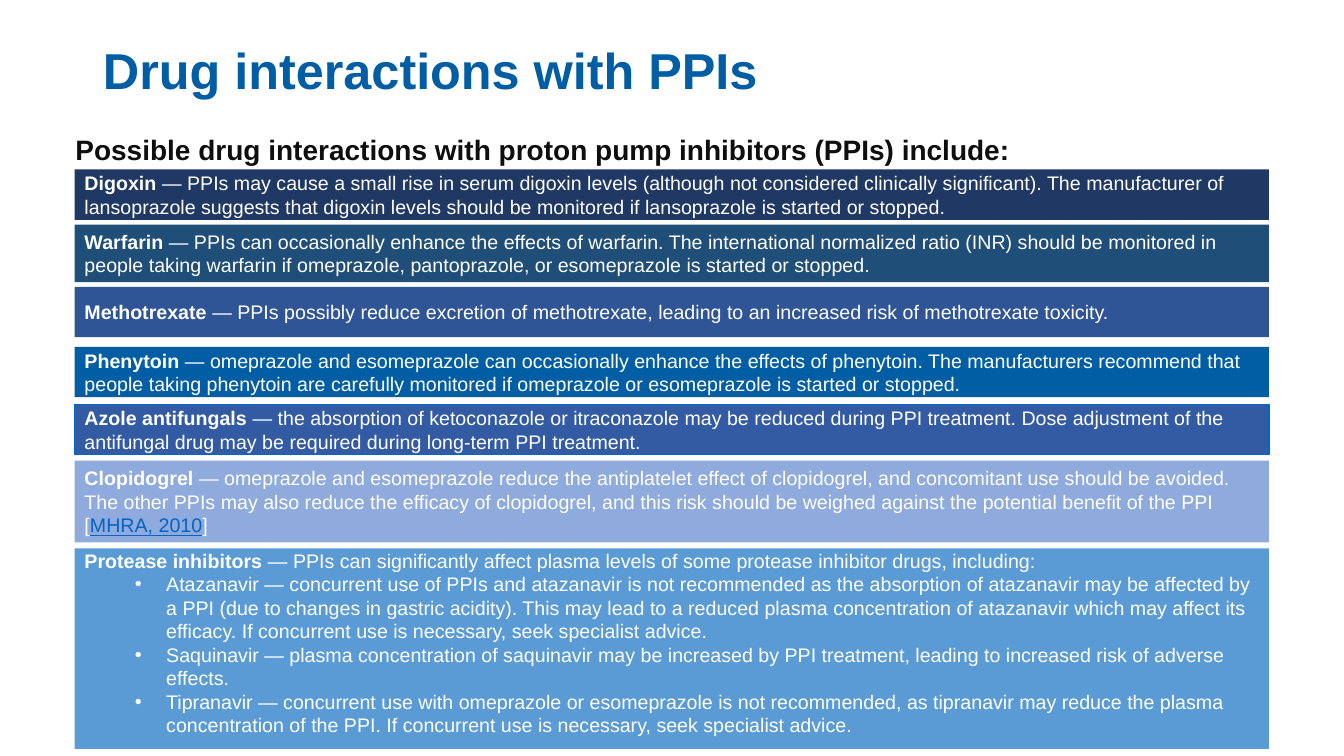
from lxml import etree
from pptx import Presentation
from pptx.dml.color import RGBColor
from pptx.enum.shapes import MSO_SHAPE
from pptx.enum.text import MSO_ANCHOR, MSO_AUTO_SIZE, PP_ALIGN
from pptx.oxml.ns import qn
from pptx.util import Cm, Pt

RECTANGLE = MSO_SHAPE.RECTANGLE
TOP, MIDDLE = MSO_ANCHOR.TOP, MSO_ANCHOR.MIDDLE
LEFT = PP_ALIGN.LEFT
NO_AUTOFIT = MSO_AUTO_SIZE.NONE

COLORS = {
    "title": "015EA4",
    "intro": "0E0E0E",
    "text": "FFFFFF",
    "citation": "0563C1",
    "digoxin": "203864",
    "warfarin": "1F4E79",
    "methotrexate": "2F5597",
    "phenytoin": "015EA4",
    "azole": "325BA4",
    "azole_edge": "0066CC",
    "clopidogrel": "8FAADC",
    "protease": "5B9BD5",
}

BAND_LEFT, BAND_WIDTH = Cm(1.88), Cm(30.1)

INTERACTIONS = [
    ("digoxin", 4.27, 1.27, "Digoxin ",
     "— PPIs may cause a small rise in serum digoxin levels (although not considered clinically "
     "significant). The manufacturer of lansoprazole suggests that digoxin levels should be "
     "monitored if lansoprazole is started or stopped."),
    ("warfarin", 5.66, 1.45, "Warfarin ",
     "— PPIs can occasionally enhance the effects of warfarin. The international normalized ratio "
     "(INR) should be monitored in people taking warfarin if omeprazole, pantoprazole, or "
     "esomeprazole is started or stopped."),
    ("methotrexate", 7.23, 1.27, "Methotrexate ",
     "— PPIs possibly reduce excretion of methotrexate, leading to an increased risk of "
     "methotrexate toxicity."),
    ("phenytoin", 8.74, 1.27, "Phenytoin ",
     "— omeprazole and esomeprazole can occasionally enhance the effects of phenytoin. The "
     "manufacturers recommend that people taking phenytoin are carefully monitored if omeprazole "
     "or esomeprazole is started or stopped."),
    ("azole", 10.19, 1.27, "Azole antifungals ",
     "— the absorption of ketoconazole or itraconazole may be reduced during PPI treatment. Dose "
     "adjustment of the antifungal drug may be required during long-term PPI treatment."),
    ("clopidogrel", 11.61, 2.06, "Clopidogrel ",
     "— omeprazole and esomeprazole reduce the antiplatelet effect of clopidogrel, and concomitant "
     "use should be avoided. The other PPIs may also reduce the efficacy of clopidogrel, and this "
     "risk should be weighed against the potential benefit of the PPI ["),
    ("protease", 13.82, 5.05, "Protease inhibitors ",
     "— PPIs can significantly affect plasma levels of some protease inhibitor drugs, including:"),
]

PROTEASE_INHIBITORS = [
    "Atazanavir — concurrent use of PPIs and atazanavir is not recommended as the absorption of "
    "atazanavir may be affected by a PPI (due to changes in gastric acidity). This may lead to a "
    "reduced plasma concentration of atazanavir which may affect its efficacy. If concurrent use "
    "is necessary, seek specialist advice.",
    "Saquinavir — plasma concentration of saquinavir may be increased by PPI treatment, leading to "
    "increased risk of adverse effects.",
    "Tipranavir — concurrent use with omeprazole or esomeprazole is not recommended, as tipranavir "
    "may reduce the plasma concentration of the PPI. If concurrent use is necessary, seek "
    "specialist advice.",
]


def apply_format(target, values):
    for attribute, value in values.items():
        setattr(target, attribute, value)


def add_run(paragraph, text, size=14, color="text", bold=False, underline=False):
    run = paragraph.add_run()
    run.text = text
    apply_format(run.font, {"name": "Arial", "size": Pt(size), "bold": bold, "underline": underline})
    run.font.color.rgb = RGBColor.from_string(COLORS[color])


def write_heading(shape, text, size, color, left, top, width, height):
    apply_format(shape, {"left": Cm(left), "top": Cm(top), "width": Cm(width), "height": Cm(height)})
    frame = shape.text_frame
    apply_format(frame, {"word_wrap": True, "auto_size": NO_AUTOFIT, "vertical_anchor": TOP})
    paragraph = frame.paragraphs[0]
    apply_format(paragraph, {"alignment": LEFT, "line_spacing": 0.9})
    add_run(paragraph, text, size, color, bold=True)


def add_band(slide, drug, top, height, name, effect):
    band = slide.shapes.add_shape(RECTANGLE, BAND_LEFT, Cm(top), BAND_WIDTH, Cm(height))
    band.shadow.inherit = False
    band.fill.solid()
    band.fill.fore_color.rgb = RGBColor.from_string(COLORS[drug])
    band.line.fill.background()
    apply_format(band.text_frame, {
        "word_wrap": True, "vertical_anchor": MIDDLE, "margin_top": 0, "margin_bottom": 0,
    })
    paragraph = band.text_frame.paragraphs[0]
    paragraph.alignment = LEFT
    add_run(paragraph, name, bold=True)
    add_run(paragraph, effect)
    return band


def add_bullet(frame, text):
    paragraph = frame.add_paragraph()
    apply_format(paragraph, {"level": 1, "alignment": LEFT})
    properties = paragraph._p.get_or_add_pPr()
    properties.set("marL", str(Cm(2.06)))
    properties.set("indent", str(Cm(-0.79)))
    etree.SubElement(properties, qn("a:buFont")).set("typeface", "Arial")
    etree.SubElement(properties, qn("a:buChar")).set("char", "•")
    add_run(paragraph, text)


def main():
    presentation = Presentation()
    apply_format(presentation, {"slide_width": Cm(33.87), "slide_height": Cm(19.05)})
    slide = presentation.slides.add_slide(presentation.slide_layouts[5])

    write_heading(slide.shapes.title, "Drug interactions with PPIs", 36, "title", 2.34, 1.02, 29.21, 2)
    intro = slide.shapes.add_textbox(0, 0, 0, 0)
    write_heading(intro, "Possible drug interactions with proton pump inhibitors (PPIs) include:",
                  20, "intro", 1.65, 3.3, 29.21, 0.97)

    bands = {interaction[0]: add_band(slide, *interaction) for interaction in INTERACTIONS}

    azole_edge = bands["azole"].line
    azole_edge.color.rgb = RGBColor.from_string(COLORS["azole_edge"])
    azole_edge.width = Pt(1)

    clopidogrel_advice = bands["clopidogrel"].text_frame.paragraphs[0]
    add_run(clopidogrel_advice, "MHRA, 2010", color="citation", underline=True)
    add_run(clopidogrel_advice, "]")

    protease_frame = bands["protease"].text_frame
    protease_frame.vertical_anchor = TOP
    for inhibitor in PROTEASE_INHIBITORS:
        add_bullet(protease_frame, inhibitor)

    presentation.save("out.pptx")


if __name__ == "__main__":
    main()
